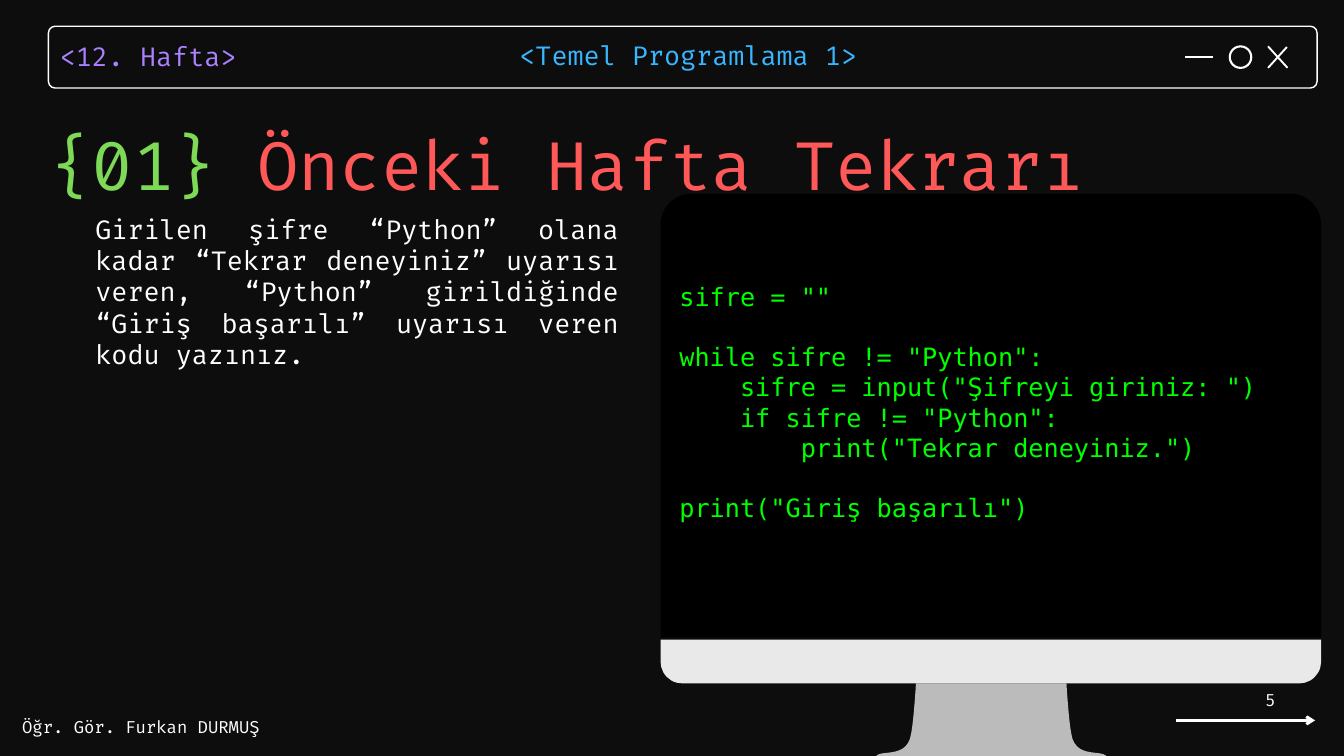
from lxml.etree import SubElement
from pptx import Presentation
from pptx.dml.color import RGBColor
from pptx.enum.shapes import MSO_CONNECTOR, MSO_SHAPE
from pptx.enum.text import MSO_ANCHOR, MSO_AUTO_SIZE, PP_ALIGN
from pptx.oxml.ns import qn
from pptx.util import Inches, Pt

COLORS = {
    "background": "0D0D0D", "white": "FFFFFF", "black": "000000",
    "purple": "AB81FF", "blue": "38B6FF", "green": "7ED957", "red": "FF5858",
    "chin": "E9E9E9", "stand": "BBBBBB", "code": "00FF00",
}
BODY_FONT, CODE_FONT = "Fira Code", "DejaVu Sans Mono"

# Each text: box, paragraphs of (text, color) runs, size, formats of its paragraphs
TEXTS = [
    ((0.89, 0.52, 3.4, 0.53), [[("<12. Hafta>", "purple")]], 28,
     {"line_spacing": Pt(39.2)}),
    ((7.73, 0.51, 5.29, 0.53), [[("<Temel Programlama 1>", "blue")]], 28,
     {"line_spacing": Pt(39.2)}),
    ((0.33, 10.67, 3.67, 0.3), [[("Öğr. Gör. Furkan DURMUŞ", "white")]], 18, {}),
    ((1.42, 3.17, 7.78, 2.36), [[(
        "Girilen şifre “Python” olana kadar “Tekrar deneyiniz” uyarısı veren, "
        "“Python” girildiğinde “Giriş başarılı” uyarısı veren kodu yazınız.",
        "white")]], 28, {"alignment": PP_ALIGN.JUSTIFY}),
    ((0.75, 1.61, 19.25, 1.41),
     [[("{01} ", "green"), ("Önceki Hafta Tekrarı", "red")]], 72,
     {"line_spacing": Pt(102.6)}),
]
PAGE_NUMBER = ((16.75, 10.21, 2.33, 0.4), [[("5", "white")]], 18,
               {"alignment": PP_ALIGN.RIGHT})

CODE_BOX, CODE_SIZE, CODE_GAP = (10.11, 4.18, 9.04, 3.64), 27, 32.4
CODE_BLOCKS = [
    ['sifre = ""'],
    ['while sifre != "Python":',
     '    sifre = input("Şifreyi giriniz: ")',
     '    if sifre != "Python":',
     '        print("Tekrar deneyiniz.")'],
    ['print("Giriş başarılı")'],
]

# Each shape: preset, box, adjustments, fill, line color, line width
HEADER_SHAPES = [
    (MSO_SHAPE.ROUNDED_RECTANGLE, (0.72, 0.39, 18.88, 0.92), [0.11], None, "white", 1.5),
    (MSO_SHAPE.OVAL, (18.3, 0.69, 0.32, 0.32), [], None, "white", 2.25),
]
MONITOR_SHAPES = [
    (MSO_SHAPE.ROUND_2_SAME_RECTANGLE, (9.83, 2.88, 9.83, 6.61), [0.07, 0], "black", None, 0),
    (MSO_SHAPE.ROUND_2_SAME_RECTANGLE, (9.83, 9.52, 9.83, 0.65), [0, 0.5], "chin", None, 0),
    (MSO_SHAPE.RECTANGLE, (10.27, 3.17, 9.04, 6.1), [], "black", "black", 2),
]

# Each line: start, end, width, arrowhead
LINES = [
    ((18.87, 0.69), (19.16, 1.01), 2, False),
    ((19.15, 0.7), (18.87, 1.01), 2, False),
    ((17.64, 0.85), (18.05, 0.85), 2, False),
    ((17.5, 10.72), (19.57, 10.72), 3, True),
]

# Left half of the stand as Bezier curves; the right half mirrors it
STAND_CENTER = 14.75
STAND_CURVES = [
    ((13.63, 10.17), (13.63, 10.17), (13.6, 10.69), (13.56, 10.91)),
    ((13.56, 10.91), (13.51, 11.28), (13.15, 11.16), (13.05, 11.24)),
    ((13.05, 11.24), (13.03, 11.25), (13.04, 11.27), (13.06, 11.27)),
]
CURVE_STEPS = 12


def color(name):
    return RGBColor.from_string(COLORS[name])


def inches(values):
    return [Inches(value) for value in values]


def paint(shape, fill, line=None, width=0):
    shape.shadow.inherit = False
    if fill:
        shape.fill.solid()
        shape.fill.fore_color.rgb = color(fill)
    else:
        shape.fill.background()
    if line:
        shape.line.color.rgb = color(line)
        shape.line.width = Pt(width)
    else:
        shape.line.fill.background()


def add_text(slide, box, paragraphs, size, formats, font=BODY_FONT):
    frame = slide.shapes.add_textbox(*inches(box)).text_frame
    settings = {"word_wrap": True, "auto_size": MSO_AUTO_SIZE.SHAPE_TO_FIT_TEXT,
                "margin_left": 0, "margin_right": 0,
                "margin_top": 0, "margin_bottom": 0}
    for name, value in settings.items():
        setattr(frame, name, value)
    for index, runs in enumerate(paragraphs):
        paragraph = frame.paragraphs[0] if index == 0 else frame.add_paragraph()
        for name, value in formats.items():
            setattr(paragraph, name, value)
        for text, color_name in runs:
            run = paragraph.add_run()
            run.text = text
            run.font.name, run.font.size = font, Pt(size)
            run.font.color.rgb = color(color_name)
    return frame


def add_preset(slide, preset, box, adjustments, fill, line, width):
    shape = slide.shapes.add_shape(preset, *inches(box))
    for index, value in enumerate(adjustments):
        shape.adjustments[index] = value
    paint(shape, fill, line, width)


def add_line(slide, start, end, width, arrow):
    connector = slide.shapes.add_connector(MSO_CONNECTOR.STRAIGHT, *inches(start + end))
    connector.line.color.rgb = color("white")
    connector.line.width = Pt(width)
    if arrow:
        SubElement(connector.line._get_or_add_ln(), qn("a:tailEnd"), type="arrow")
    SubElement(connector._element.spPr, qn("a:effectLst"))


def curve_point(curve, t):
    weights = ((1 - t) ** 3, 3 * t * (1 - t) ** 2, 3 * t ** 2 * (1 - t), t ** 3)
    return tuple(sum(weight * point[axis] for weight, point in zip(weights, curve))
                 for axis in (0, 1))


def add_stand(slide):
    left = [curve_point(curve, step / CURVE_STEPS)
            for curve in STAND_CURVES for step in range(CURVE_STEPS + 1)]
    right = [(2 * STAND_CENTER - x, y) for x, y in reversed(left)]
    outline = [inches(point) for point in left + right]
    builder = slide.shapes.build_freeform(*outline[0])
    builder.add_line_segments(outline[1:], close=True)
    paint(builder.convert_to_shape(), "stand")


def add_code(slide):
    lines = [[(line, "code")] for block in CODE_BLOCKS for line in block]
    frame = add_text(slide, CODE_BOX, lines, CODE_SIZE, {}, CODE_FONT)
    first = 0
    for block in CODE_BLOCKS[:-1]:
        first += len(block)
        frame.paragraphs[first].space_before = Pt(CODE_GAP)


def main():
    presentation = Presentation()
    presentation.slide_width, presentation.slide_height = Inches(20), Inches(11.25)
    slide = presentation.slides.add_slide(presentation.slide_layouts[6])
    slide.background.fill.solid()
    slide.background.fill.fore_color.rgb = color("background")

    # Window bar, its buttons and the footer arrow
    for shape in HEADER_SHAPES:
        add_preset(slide, *shape)
    for line in LINES:
        add_line(slide, *line)

    # Titles, task and page number
    for text in TEXTS:
        add_text(slide, *text)
    number = add_text(slide, *PAGE_NUMBER)
    number.auto_size = MSO_AUTO_SIZE.NONE
    number.vertical_anchor = MSO_ANCHOR.MIDDLE
    number.margin_left = number.margin_right = Inches(0.1)

    # Monitor with the code on its screen
    add_stand(slide)
    for shape in MONITOR_SHAPES:
        add_preset(slide, *shape)
    add_code(slide)

    presentation.save("out.pptx")


if __name__ == "__main__":
    main()
